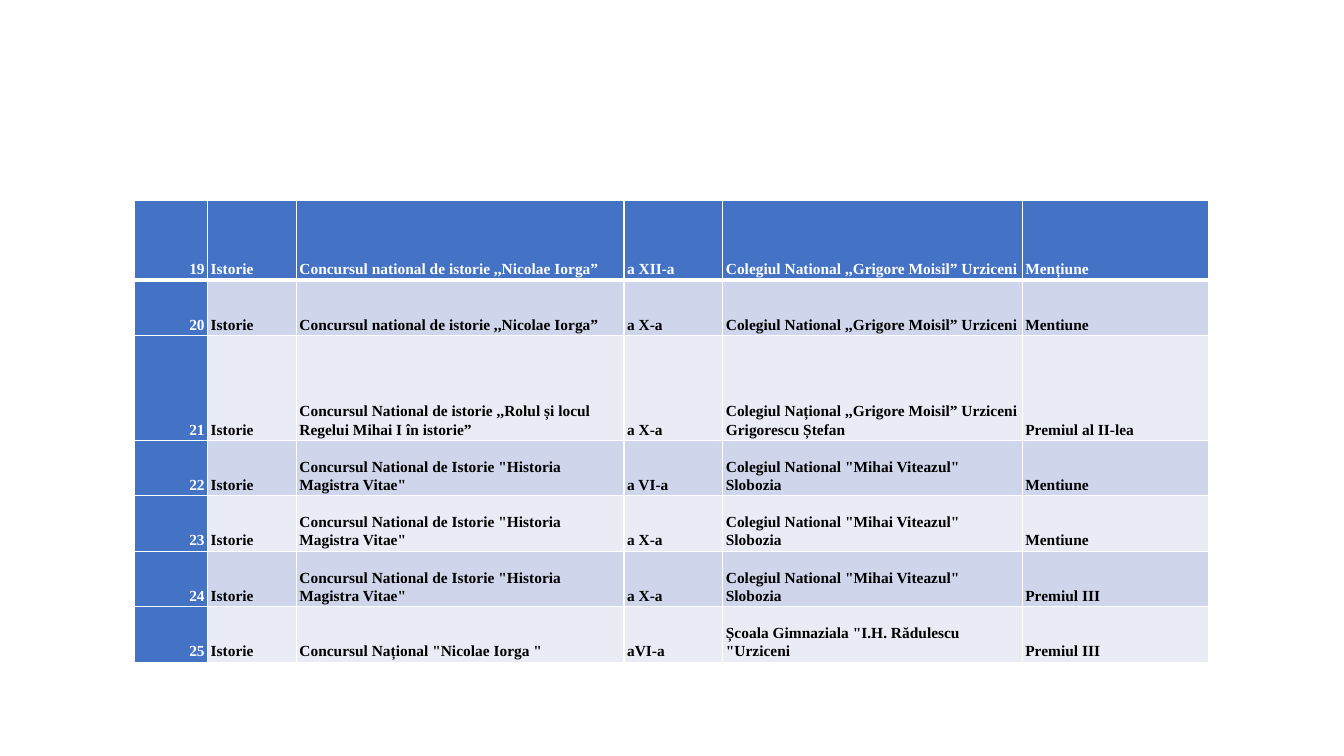
"""Builds a slide with a table of history contest prizes."""
from lxml.etree import SubElement
from pptx import Presentation
from pptx.dml.color import RGBColor
from pptx.enum.text import MSO_ANCHOR as ANCHOR, PP_ALIGN as ALIGN
from pptx.oxml.ns import qn
from pptx.util import Inches, Pt

WHITE = RGBColor(0xFF, 0xFF, 0xFF)
BLACK = RGBColor(0x00, 0x00, 0x00)
BLUE = RGBColor(0x44, 0x72, 0xC4)
BAND_DARK = RGBColor(0xCF, 0xD5, 0xEA)
BAND_LIGHT = RGBColor(0xE9, 0xEB, 0xF5)

FIRST_NUMBER = 19
SUBJECT = "Istorie"
IORGA = "Concursul national de istorie ,,Nicolae Iorga”"
HISTORIA = 'Concursul National de Istorie "Historia Magistra Vitae"'
MOISIL = "Colegiul National ,,Grigore Moisil” Urziceni"
VITEAZUL = 'Colegiul National "Mihai Viteazul" Slobozia'
PRIZES = [
    (IORGA, "a XII-a", MOISIL, "Mențiune"),
    (IORGA, "a X-a", MOISIL, "Mentiune"),
    ("Concursul National de istorie ,,Rolul și locul Regelui Mihai I în istorie”", "a X-a",
     "Colegiul Național ,,Grigore Moisil” Urziceni Grigorescu Ștefan", "Premiul al II-lea"),
    (HISTORIA, "a VI-a", VITEAZUL, "Mentiune"),
    (HISTORIA, "a X-a", VITEAZUL, "Mentiune"),
    (HISTORIA, "a X-a", VITEAZUL, "Premiul III"),
    ('Concursul Național "Nicolae Iorga "', "aVI-a",
     'Școala Gimnaziala "I.H. Rădulescu "Urziceni', "Premiul III"),
]
COL_WIDTHS = [0.73, 0.88, 3.25, 0.98, 2.97, 1.85]
ROW_HEIGHTS = [0.79, 0.55, 1.04] + [0.55] * 4


def add_border(cell, side, points):
    ln = SubElement(cell._tc.get_or_add_tcPr(), qn(f"a:ln{side}"), w=str(Pt(points)))
    SubElement(SubElement(ln, qn("a:solidFill")), qn("a:srgbClr"), val=str(WHITE))


prs = Presentation()
prs.slide_width, prs.slide_height = Inches(13.33), Inches(7.5)
s = prs.slides.add_slide(prs.slide_layouts[6])
table = s.shapes.add_table(
    len(ROW_HEIGHTS), len(COL_WIDTHS), Inches(1.33), Inches(1.99),
    Inches(sum(COL_WIDTHS)), Inches(sum(ROW_HEIGHTS))).table
table.first_col = True
for column, width in zip(table.columns, COL_WIDTHS):
    column.width = Inches(width)
for row, height in zip(table.rows, ROW_HEIGHTS):
    row.height = Inches(height)

for i, prize in enumerate(PRIZES):
    for j, text in enumerate((str(FIRST_NUMBER + i), SUBJECT, *prize)):
        cell = table.cell(i, j)
        on_blue = i == 0 or j == 0
        for side in "LRTB":
            header_edge = (i, side) in ((0, "B"), (1, "T"))
            add_border(cell, side, 3 if header_edge else 1)
        cell.fill.solid()
        band = BAND_DARK if i % 2 else BAND_LIGHT
        cell.fill.fore_color.rgb = BLUE if on_blue else band
        cell.vertical_anchor = ANCHOR.BOTTOM
        cell.margin_left = cell.margin_right = Inches(0.03)
        cell.margin_top = cell.margin_bottom = Inches(0.02)
        p = cell.text_frame.paragraphs[0]
        p.alignment = ALIGN.LEFT if j else ALIGN.RIGHT
        p.line_spacing = 1.07
        r = p.add_run()
        r.text = text
        r.font.name = "Times New Roman"
        r.font.size = Pt(11)
        r.font.bold = True
        r.font.color.rgb = WHITE if on_blue else BLACK

prs.save("out.pptx")
